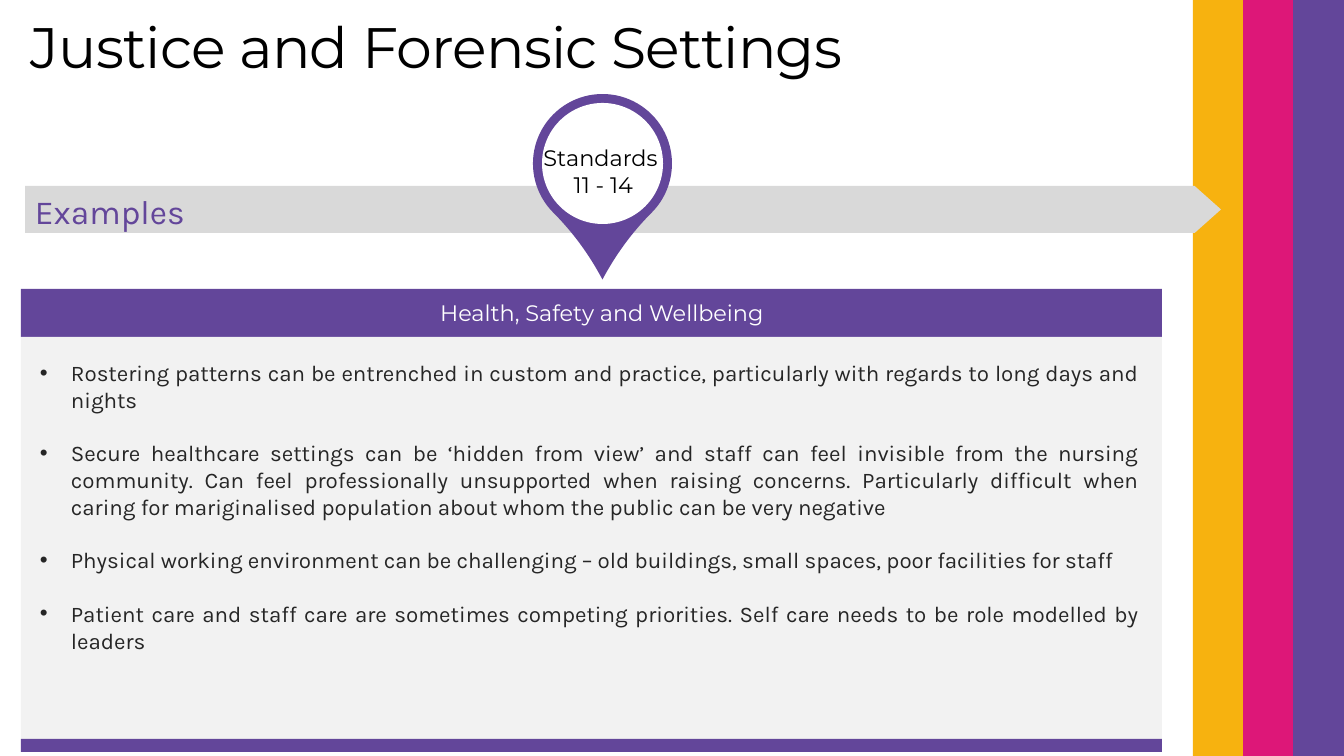
from dataclasses import dataclass

from lxml.etree import SubElement
from pptx import Presentation
from pptx.dml.color import RGBColor
from pptx.enum.shapes import MSO_SHAPE
from pptx.enum.text import MSO_ANCHOR, PP_ALIGN
from pptx.oxml.ns import qn
from pptx.util import Emu, Pt


@dataclass(frozen=True)
class Theme:
    purple: str = "63469A"
    pink: str = "DD1778"
    amber: str = "F7B20F"
    band: str = "D9D9D9"
    panel: str = "F2F2F2"
    white: str = "FFFFFF"
    black: str = "000000"
    ink: str = "262626"
    heading: str = "Montserrat"
    body: str = "Karla"
    title_size: float = 40.7
    label_size: int = 24
    text_size: int = 16
    bullet_gap: int = 19


T = Theme()
TITLE = "Justice and Forensic Settings"
LABEL = "Examples"
PIN = ["Standards", " 11 - 14"]
PANEL_HEADING = "Health, Safety and Wellbeing"
BULLETS = [
    "Rostering patterns can be entrenched in custom and practice, particularly with regards to long days and nights",
    "Secure healthcare settings can be ‘hidden from view’ and staff can feel invisible from the nursing community. "
    "Can feel professionally unsupported when raising concerns. Particularly difficult when caring for mariginalised "
    "population about whom the public can be very negative",
    "Physical working environment can be challenging – old buildings, small spaces, poor facilities for staff",
    "Patient care and staff care are sometimes competing priorities. Self care needs to be role modelled by leaders",
]
STRIPES = [T.amber, T.pink, T.purple]

WIDTH, HEIGHT = 1344, 756
STRIPE_LEFT, STRIPE_STEP = 1193, 50
PANEL_LEFT, PANEL_WIDTH = 21, 1141
HEADER_TOP, BODY_TOP, FOOTER_TOP, PANEL_BOTTOM = 289, 337, 739, 752
PIN_LEFT, PIN_TOP, PIN_SIZE, PIN_RING = 533, 94, 139, 9
BAND_LEFT, BAND_TOP = 25, 186
INDENT = 31


def px(n):
    return Emu(round(n * 914400 / 100.8))


prs = Presentation()
prs.slide_width, prs.slide_height = px(WIDTH), px(HEIGHT)
slide = prs.slides.add_slide(prs.slide_layouts[6])


def add_block(kind, x, y, w, h, color, adj=()):
    sp = slide.shapes.add_shape(kind, px(x), px(y), px(w), px(h))
    sp.shadow.inherit = False
    sp.fill.solid()
    sp.fill.fore_color.rgb = RGBColor.from_string(color)
    sp.line.fill.background()
    for i, value in enumerate(adj):
        sp.adjustments[i] = value
    return sp


def add_text(lines, x, y, w, h, *, font, size, color, align=PP_ALIGN.LEFT,
             anchor=MSO_ANCHOR.TOP, wrap=True, gap=0, leading=None, tracking=None, bullet=None):
    tf = slide.shapes.add_textbox(px(x), px(y), px(w), px(h)).text_frame
    tf.word_wrap, tf.vertical_anchor = wrap, anchor
    for i, line in enumerate(lines):
        p = tf.add_paragraph() if i else tf.paragraphs[0]
        p.alignment, p.line_spacing = align, leading
        p.space_after = Pt(gap)
        r = p.add_run()
        r.text = line
        r.font.name, r.font.size = font, Pt(size)
        r.font.color.rgb = RGBColor.from_string(color)
        if tracking is not None:
            r.font._element.set("spc", str(tracking))
        if bullet:
            pPr = p._p.get_or_add_pPr()
            pPr.set("marL", str(px(INDENT)))
            pPr.set("indent", str(-px(INDENT)))
            SubElement(pPr, qn("a:buFont")).set("typeface", "Arial")
            SubElement(pPr, qn("a:buChar")).set("char", bullet)


for i, color in enumerate(STRIPES):
    add_block(MSO_SHAPE.RECTANGLE, STRIPE_LEFT + i * STRIPE_STEP, 0, STRIPE_STEP + 1, HEIGHT, color)

add_block(MSO_SHAPE.RIGHT_ARROW, BAND_LEFT, BAND_TOP, 1196, 47, T.band, (1, 0.56))
pin = add_block(MSO_SHAPE.TEAR, PIN_LEFT, PIN_TOP, PIN_SIZE, PIN_SIZE, T.purple, (1.18,))
pin.rotation = 135
hole = PIN_SIZE - 2 * PIN_RING
add_block(MSO_SHAPE.OVAL, PIN_LEFT + PIN_RING, PIN_TOP + PIN_RING, hole, hole, T.white)
add_text(PIN, 532, 139, 137, 65, font=T.heading, size=T.text_size, color=T.black,
         align=PP_ALIGN.CENTER, anchor=MSO_ANCHOR.MIDDLE, wrap=False)

for top, bottom, color in [(HEADER_TOP, BODY_TOP, T.purple),
                           (BODY_TOP, FOOTER_TOP, T.panel),
                           (FOOTER_TOP, PANEL_BOTTOM, T.purple)]:
    add_block(MSO_SHAPE.RECTANGLE, PANEL_LEFT, top, PANEL_WIDTH, bottom - top, color)

add_text([PANEL_HEADING], 73, 294, 1058, 37, font=T.heading, size=T.text_size,
         color=T.white, align=PP_ALIGN.CENTER)
add_text(BULLETS, 30, 354, 1119, 336, font=T.body, size=T.text_size, color=T.ink,
         align=PP_ALIGN.JUSTIFY, gap=T.bullet_gap, bullet="•")
add_text([LABEL], BAND_LEFT, BAND_TOP, 177, 50, font=T.body, size=T.label_size,
         color=T.purple, wrap=False, gap=6)
add_text([TITLE], PANEL_LEFT, 18, 1089, 66, font=T.heading, size=T.title_size,
         color=T.black, anchor=MSO_ANCHOR.BOTTOM, leading=0.8, tracking=-50)

prs.save("out.pptx")
